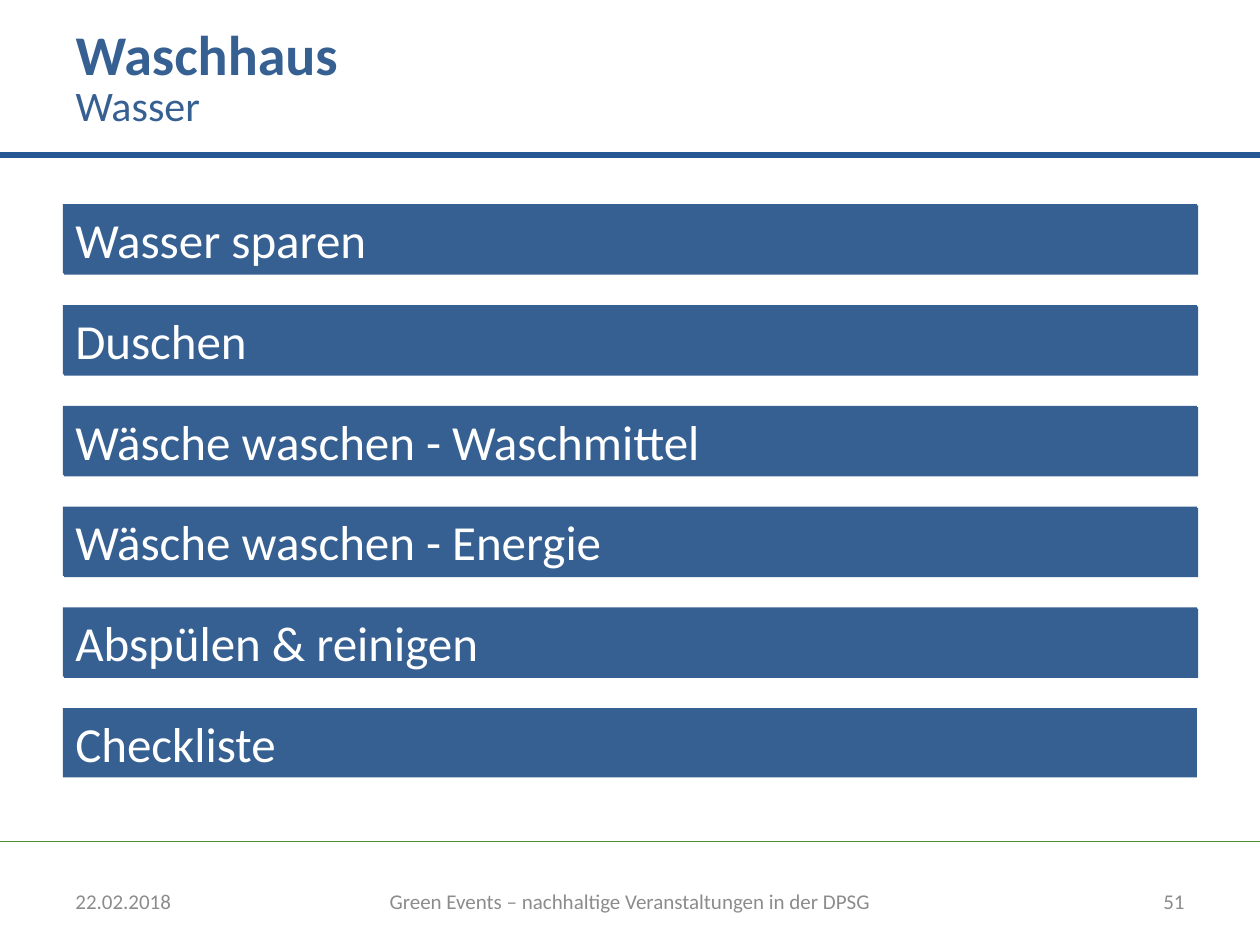
"""Build the "Waschhaus" overview slide with six topic bars."""
from lxml import etree
from pptx import Presentation
from pptx.dml.color import RGBColor
from pptx.enum.shapes import MSO_CONNECTOR, MSO_SHAPE
from pptx.enum.text import MSO_ANCHOR, MSO_AUTO_SIZE, PP_ALIGN
from pptx.oxml.ns import qn
from pptx.util import Pt

LEFT, CENTER, RIGHT = PP_ALIGN.LEFT, PP_ALIGN.CENTER, PP_ALIGN.RIGHT
MIDDLE, NO_FIT = MSO_ANCHOR.MIDDLE, MSO_AUTO_SIZE.NONE
RECT, STRAIGHT = MSO_SHAPE.RECTANGLE, MSO_CONNECTOR.STRAIGHT

TITLE, SUBTITLE = "Waschhaus", "Wasser"
TOPICS = [
    "Wasser sparen",
    "Duschen",
    "Wäsche waschen - Waschmittel",
    "Wäsche waschen - Energie",
    "Abspülen & reinigen",
    "Checkliste",
]
FOOTER = [
    ("22.02.2018", 36, 168, LEFT),
    ("Green Events – nachhaltige Veranstaltungen in der DPSG", 215.25, 289.5, CENTER),
    ("51", 516, 168, RIGHT),
]
THEME = {
    "bar": "376092",
    "title": {"size": 32, "color": "376092", "bold": True},
    "subtitle": {"size": 24, "color": "376092", "bold": False},
    "topic": {"size": 28, "color": "FFFFFF", "bold": False},
    "footer": {"size": 12, "color": "8C8C8C", "bold": False},
}
RULES = [(481, 720, "4F8D2C", 0.75), (88.6, 728.6, "255793", 3)]
MARGIN, BAR_TOP, BAR_W, BAR_H, PITCH = 36, 116.7, 648, 39.6, 57.6
BACK_OFFSET = 0.7
FOOTER_TOP, FOOTER_H = 500.5, 28.75


def place(s, x, y, w, h):
    box = {"left": x, "top": y, "width": w, "height": h}
    for name, value in box.items():
        setattr(s, name, Pt(value))


def write(s, text, style, align=LEFT):
    tf = s.text_frame
    frame = {"word_wrap": True, "auto_size": NO_FIT, "vertical_anchor": MIDDLE}
    for name, value in frame.items():
        setattr(tf, name, value)
    p = tf.paragraphs[0]
    p.alignment, p.space_before = align, Pt(0)
    r = p.add_run()
    r.text = text
    font = {"name": "Calibri", "size": Pt(style["size"]), "bold": style["bold"]}
    for name, value in font.items():
        setattr(r.font, name, value)
    r.font.color.rgb = RGBColor.from_string(style["color"])


def add_bar(slide, x, y):
    s = slide.shapes.add_shape(RECT, Pt(x), Pt(y), Pt(BAR_W), Pt(BAR_H))
    s.shadow.inherit = False
    s.fill.solid()
    s.fill.fore_color.rgb = RGBColor.from_string(THEME["bar"])
    s.line.fill.background()
    return s


def add_rule(slide, y, end, color, width):
    s = slide.shapes.add_connector(STRAIGHT, Pt(0), Pt(y), Pt(end), Pt(y))
    s.line.color.rgb = RGBColor.from_string(color)
    s.line.width = Pt(width)
    etree.SubElement(s._element.spPr, qn("a:effectLst"))


def main():
    prs = Presentation()
    prs.slide_width, prs.slide_height = Pt(720), Pt(540)
    slide = prs.slides.add_slide(prs.slide_layouts[1])

    title, body = slide.placeholders
    place(title, MARGIN, 0.7, 480, 59)
    write(title, TITLE, THEME["title"])
    place(body, MARGIN, 43.2, 480, 33.8)
    pPr = body.text_frame.paragraphs[0]._p.get_or_add_pPr()
    pPr.set("marL", "0")
    pPr.set("indent", "0")
    etree.SubElement(pPr, qn("a:buNone"))
    write(body, SUBTITLE, THEME["subtitle"])

    for rule in RULES:
        add_rule(slide, *rule)

    for i, topic in enumerate(TOPICS):
        y = BAR_TOP + i * PITCH
        if i < len(TOPICS) - 1:
            add_bar(slide, MARGIN + BACK_OFFSET, y + BACK_OFFSET)
        write(add_bar(slide, MARGIN, y), topic, THEME["topic"])

    for text, x, w, align in FOOTER:
        s = slide.shapes.add_textbox(Pt(x), Pt(FOOTER_TOP), Pt(w), Pt(FOOTER_H))
        write(s, text, THEME["footer"], align)

    prs.save("out.pptx")


if __name__ == "__main__":
    main()
